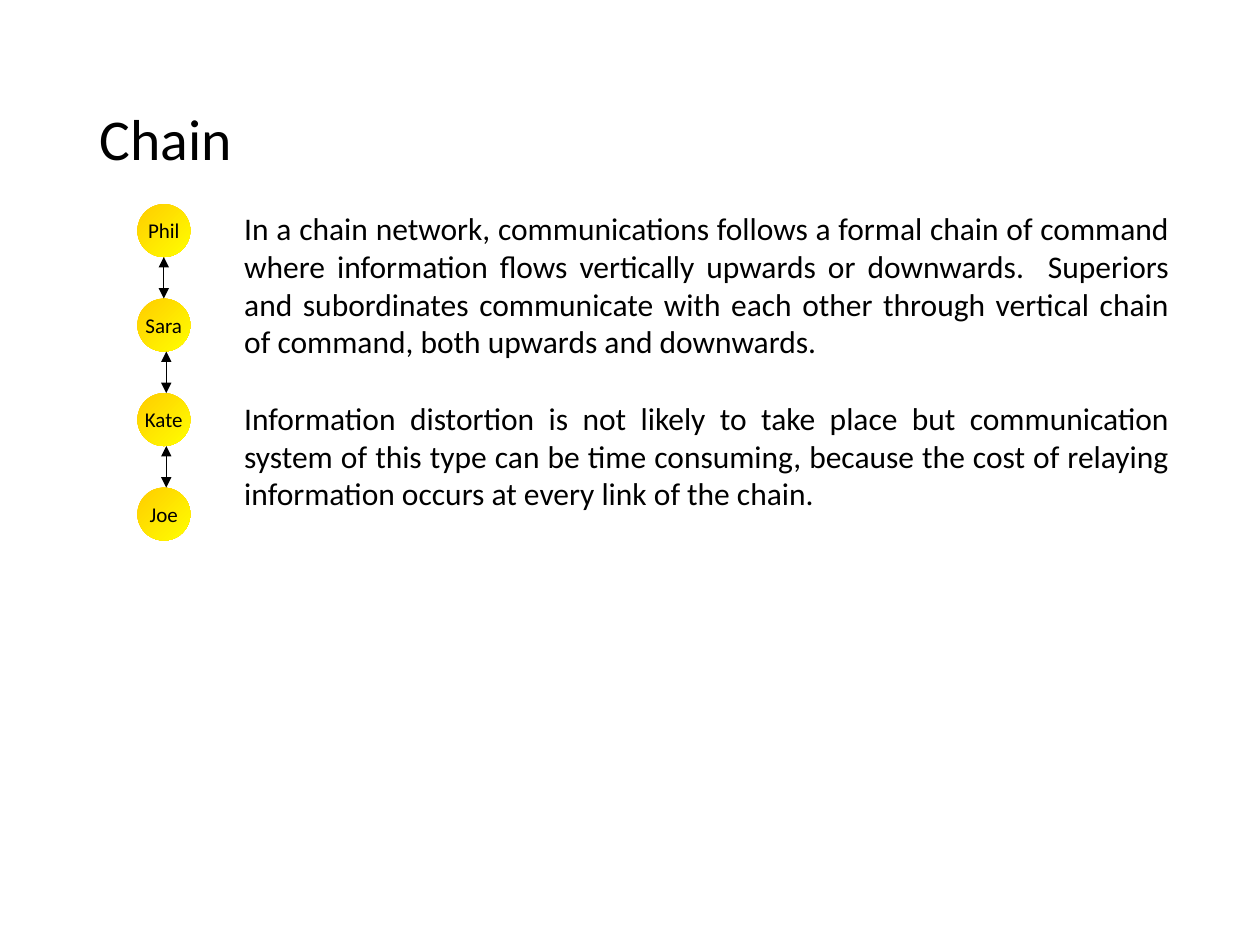
import pptx
import pptx.dml.color
import pptx.enum.shapes
import pptx.enum.text
import pptx.oxml
import pptx.oxml.ns
import pptx.util
from dataclasses import dataclass

Inches = pptx.util.Inches
Pt = pptx.util.Pt
Align = pptx.enum.text.PP_ALIGN
Anchor = pptx.enum.text.MSO_ANCHOR

# Content
TITLE = "Chain"
PEOPLE = ["Phil", "Sara", "Kate", "Joe"]
PARAGRAPHS = [
    "In a chain network, communications follows a formal chain of command "
    "where information flows vertically upwards or downwards.  Superiors and "
    "subordinates communicate with each other through vertical chain of "
    "command, both upwards and downwards. ",
    "Information distortion is not likely to take place but communication "
    "system of this type can be time consuming, because the cost of relaying "
    "information occurs at every link of the chain.",
]


@dataclass
class Theme:
    font: str = "Calibri"
    ink: str = "000000"
    node_start: str = "FFCC00"
    node_end: str = "FFFF00"
    title_size: float = 33
    body_size: float = 18
    node_size: float = 12
    line_width: float = 0.75


THEME = Theme()

# Chain layout, in inches
NODE_LEFT, NODE_TOP = 1.09, 1.62
NODE_SIZE, NODE_STEP = 0.42, 0.75
ARROW_X = [1.3, 1.32, 1.32]


def color(value):
    return pptx.dml.color.RGBColor.from_string(value)


def write_text(shape, paragraphs, size, align=Align.LEFT, anchor=Anchor.TOP,
               wrap=True, line_spacing=1.0, gap=0):
    frame = shape.text_frame
    frame.word_wrap = wrap
    frame.vertical_anchor = anchor
    for index, text in enumerate(paragraphs):
        para = frame.add_paragraph() if index else frame.paragraphs[0]
        para.alignment = align
        para.line_spacing = line_spacing
        para.space_before = Pt(gap if index else 0)
        span = para.add_run()
        span.text = text
        span.font.name = THEME.font
        span.font.size = Pt(size)
        span.font.color.rgb = color(THEME.ink)


def add_node(group, name, top):
    node = group.shapes.add_shape(
        pptx.enum.shapes.MSO_SHAPE.OVAL, Inches(NODE_LEFT), Inches(top),
        Inches(NODE_SIZE), Inches(NODE_SIZE))
    node.shadow.inherit = False
    node.line.fill.background()
    node.fill.gradient()
    node.fill.gradient_angle = 315
    for stop, value in zip(node.fill.gradient_stops,
                           (THEME.node_start, THEME.node_end)):
        stop.color.rgb = color(value)
    write_text(node, [name], THEME.node_size, align=Align.CENTER,
               anchor=Anchor.MIDDLE, wrap=False)


def add_double_arrow(group, x, top, bottom):
    arrow = group.shapes.add_connector(
        pptx.enum.shapes.MSO_CONNECTOR.STRAIGHT,
        Inches(x), Inches(top), Inches(x), Inches(bottom))
    arrow.line.color.rgb = color(THEME.ink)
    arrow.line.width = Pt(THEME.line_width)
    namespace = pptx.oxml.ns.nsdecls("a")
    for end in ("headEnd", "tailEnd"):
        arrow.line._get_or_add_ln().append(
            pptx.oxml.parse_xml(f'<a:{end} {namespace} type="triangle"/>'))
    arrow._element.spPr.append(
        pptx.oxml.parse_xml(f"<a:effectLst {namespace}/>"))


def main():
    deck = pptx.Presentation()
    deck.slide_width, deck.slide_height = Inches(10), Inches(7.5)
    page = deck.slides.add_slide(deck.slide_layouts[6])

    # Title
    box = page.shapes.add_textbox(Inches(0.69), Inches(0.4),
                                  Inches(8.62), Inches(1.45))
    write_text(box, [TITLE], THEME.title_size, anchor=Anchor.MIDDLE,
               line_spacing=0.9)

    # Chain of people
    chain = page.shapes.add_group_shape()
    tops = [NODE_TOP + index * NODE_STEP for index in range(len(PEOPLE))]
    for name, top in zip(PEOPLE, tops):
        add_node(chain, name, top)
    for x, upper, lower in zip(ARROW_X, tops, tops[1:]):
        add_double_arrow(chain, x, upper + NODE_SIZE, lower)

    # Explanation
    box = page.shapes.add_textbox(Inches(1.84), Inches(1.61),
                                  Inches(7.54), Inches(2.52))
    write_text(box, PARAGRAPHS, THEME.body_size, align=Align.JUSTIFY, gap=22)

    deck.save("out.pptx")


if __name__ == "__main__":
    main()
